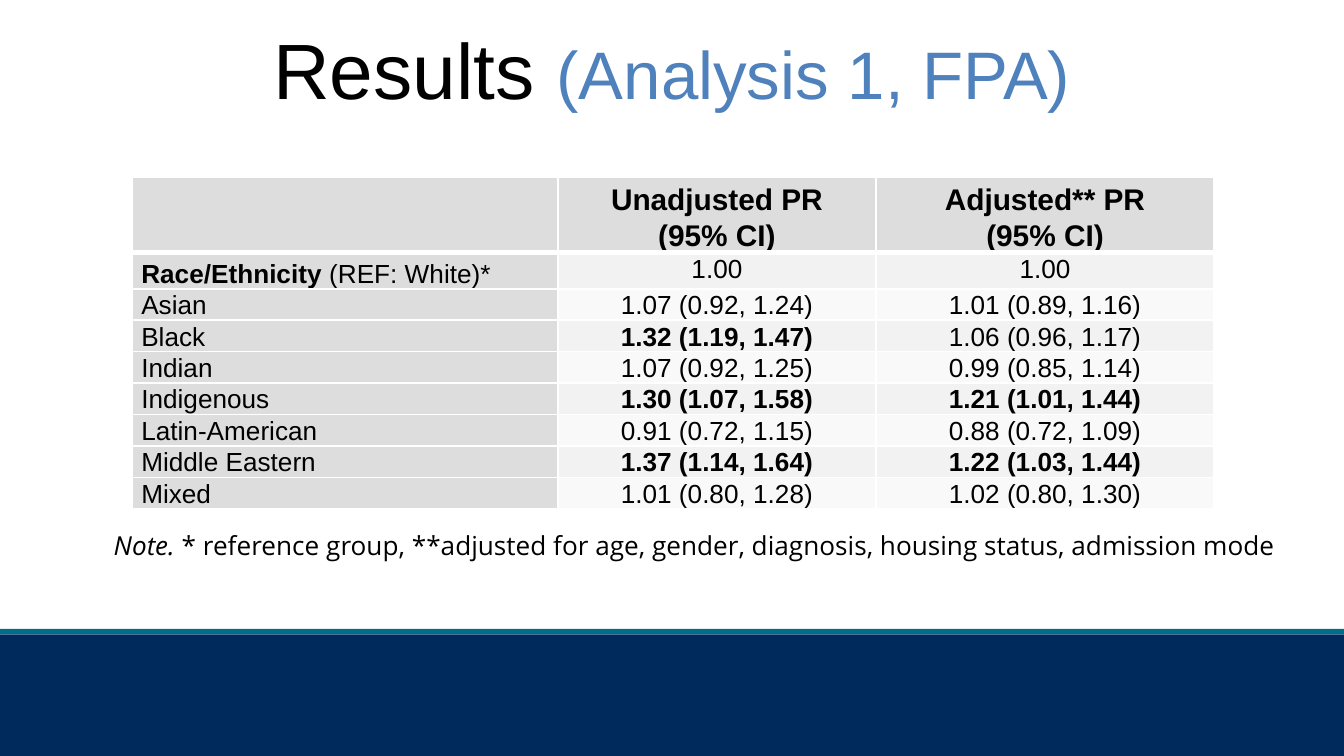
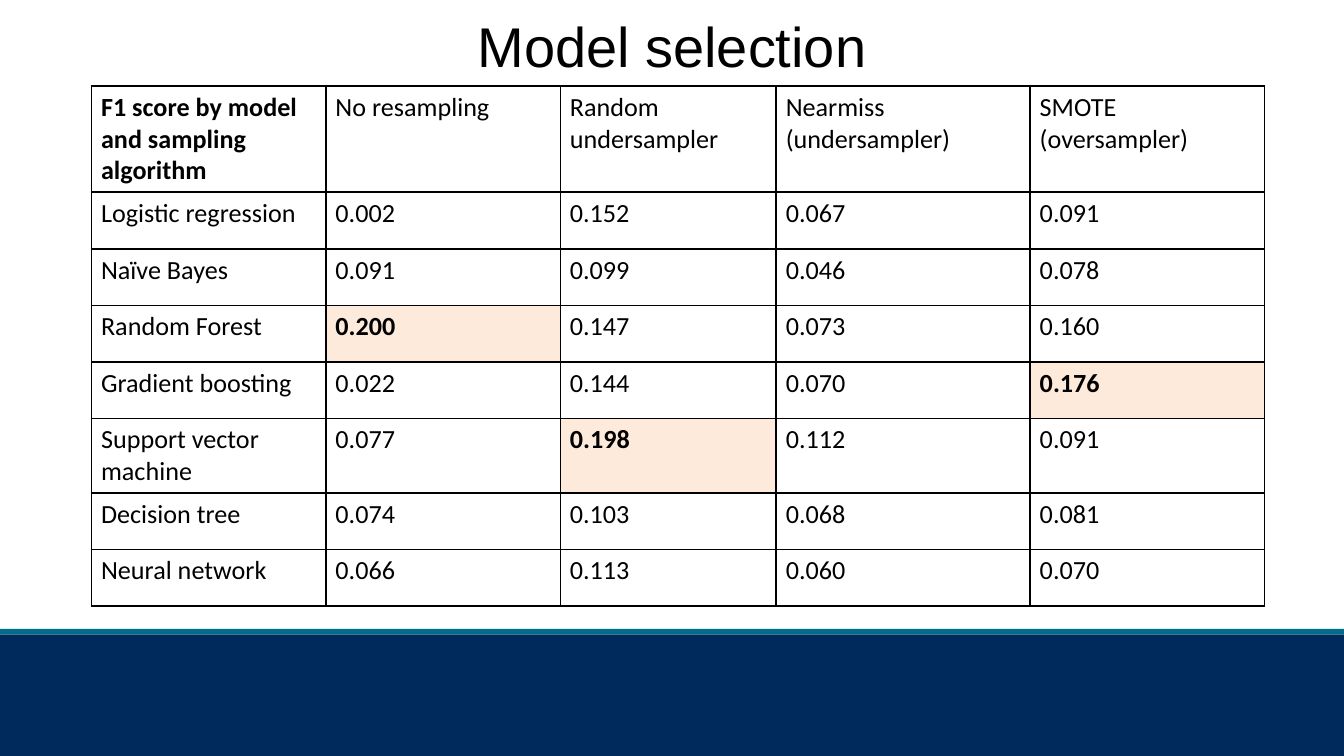
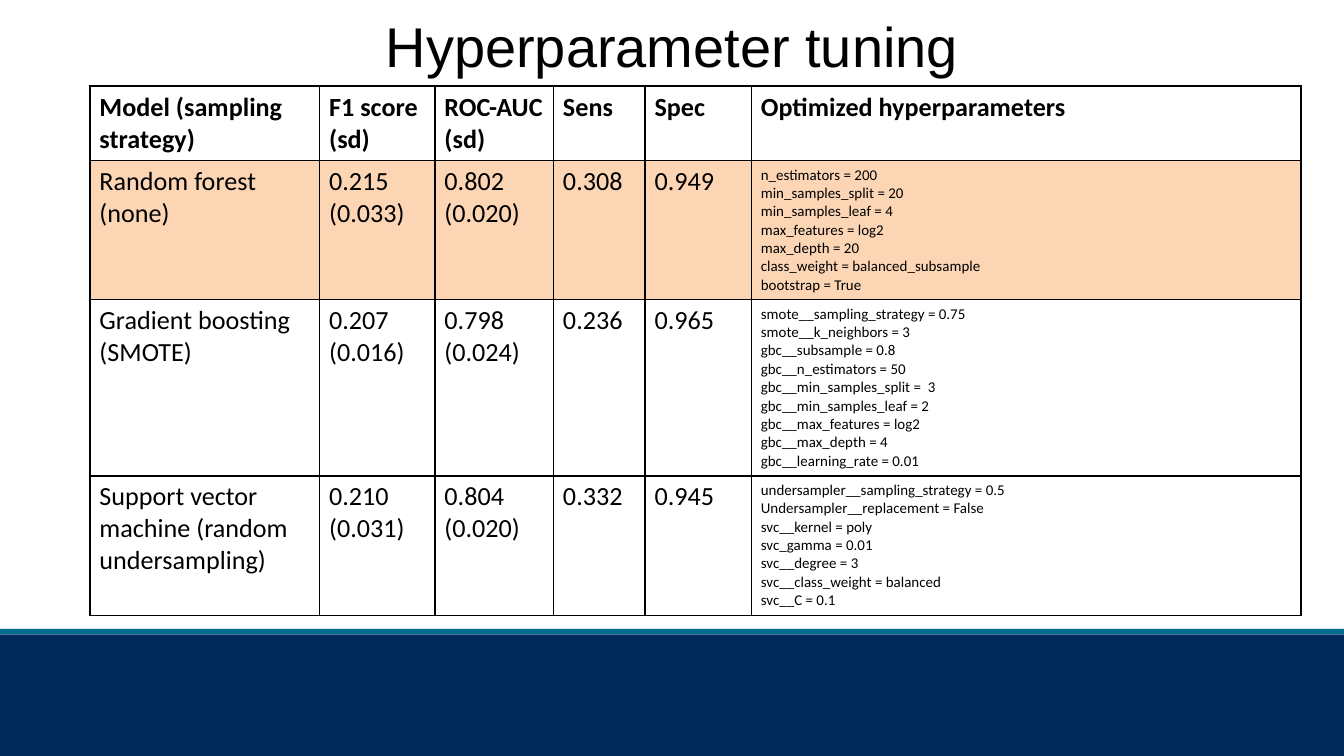
from lxml import etree
from pptx import Presentation
from pptx import util as u
from pptx.dml import color
from pptx.enum import shapes, text
from pptx.oxml import ns

NAVY, TEAL, BLUE = "002A5C", "006D8C", "4F81BD"
BLACK, WHITE = "000000", "FFFFFF"
HEAD_GREY, DARK_ROW, LIGHT_ROW = "DDDDDD", "F2F2F2", "F9F9F9"
PALE_ORANGE, ORANGE = "FDEADA", "FCD5B5"

PR_ROWS = [
    ["", "Unadjusted PR\v(95% CI)", "Adjusted** PR\n(95% CI)"],
    ["Race/Ethnicity (REF: White)*", "1.00", "1.00"],
    ["Asian", "1.07 (0.92, 1.24)", "1.01 (0.89, 1.16)"],
    ["Black", "1.32 (1.19, 1.47)", "1.06 (0.96, 1.17)"],
    ["Indian", "1.07 (0.92, 1.25)", "0.99 (0.85, 1.14)"],
    ["Indigenous", "1.30 (1.07, 1.58)", "1.21 (1.01, 1.44)"],
    ["Latin-American", "0.91 (0.72, 1.15)", "0.88 (0.72, 1.09)"],
    ["Middle Eastern", "1.37 (1.14, 1.64)", "1.22 (1.03, 1.44)"],
    ["Mixed", "1.01 (0.80, 1.28)", "1.02 (0.80, 1.30)"],
]
SIGNIFICANT = {(3, 1), (5, 1), (5, 2), (7, 1), (7, 2)}

F1_ROWS = [
    ["F1 score by model and sampling algorithm", "No resampling",
     "Random undersampler", "Nearmiss (undersampler)", "SMOTE (oversampler)"],
    ["Logistic regression", "0.002", "0.152", "0.067", "0.091"],
    ["Naïve Bayes", "0.091", "0.099", "0.046", "0.078"],
    ["Random Forest", "0.200", "0.147", "0.073", "0.160"],
    ["Gradient boosting", "0.022", "0.144", "0.070", "0.176"],
    ["Support vector machine", "0.077", "0.198", "0.112", "0.091"],
    ["Decision tree", "0.074", "0.103", "0.068", "0.081"],
    ["Neural network", "0.066", "0.113", "0.060", "0.070"],
]
BEST_SCORES = {(3, 1), (4, 4), (5, 2)}

FOREST_PARAMS = """n_estimators = 200
min_samples_split = 20
min_samples_leaf = 4
max_features = log2
max_depth = 20
class_weight = balanced_subsample
bootstrap = True"""
BOOSTING_PARAMS = """smote__sampling_strategy = 0.75
smote__k_neighbors = 3
gbc__subsample = 0.8
gbc__n_estimators = 50
gbc__min_samples_split =  3
gbc__min_samples_leaf = 2
gbc__max_features = log2
gbc__max_depth = 4
gbc__learning_rate = 0.01"""
SVM_PARAMS = """undersampler__sampling_strategy = 0.5
Undersampler__replacement = False
svc__kernel = poly
svc_gamma = 0.01
svc__degree = 3
svc__class_weight = balanced
svc__C = 0.1"""
TUNING_ROWS = [
    ["Model (sampling strategy)", "F1 score (sd)", "ROC-AUC (sd)", "Sens", "Spec",
     "Optimized hyperparameters"],
    ["Random forest (none)", "0.215 (0.033)", "0.802 (0.020)", "0.308", "0.949",
     FOREST_PARAMS],
    ["Gradient boosting (SMOTE)", "0.207 (0.016)", "0.798 (0.024)", "0.236", "0.965",
     BOOSTING_PARAMS],
    ["Support vector machine (random undersampling)", "0.210 (0.031)", "0.804 (0.020)",
     "0.332", "0.945", SVM_PARAMS],
]


def rgb(value):
    return color.RGBColor.from_string(value)


def set_font(font, name, size, fill=BLACK, bold=False, italic=False):
    font.name, font.size = name, u.Pt(size)
    font.bold, font.italic = bold, italic
    font.color.rgb = rgb(fill)


def add_runs(p, parts):
    for words, style in parts:
        r = p.add_run()
        r.text = words
        set_font(r.font, **style)


def add_bands(slide, layout):
    for i, (top, height, fill) in enumerate([(11.99, 2.3, NAVY), (11.89, 0.1, TEAL)]):
        sp = slide.shapes.add_shape(shapes.MSO_SHAPE.RECTANGLE, 0, u.Cm(top),
                                    u.Cm(25.4), u.Cm(height))
        sp.shadow.inherit = False
        sp.fill.solid()
        sp.fill.fore_color.rgb = rgb(fill)
        sp.line.fill.background()
        sp.element.nvSpPr.cNvPr.set("id", str(20 + i))
        layout.shapes.element.insert(2 + i, sp.element)


def set_title(slide, box, parts):
    sp = slide.shapes.title
    sp.left, sp.top, sp.width, sp.height = map(u.Cm, box)
    tf = sp.text_frame
    tf.auto_size = text.MSO_AUTO_SIZE.NONE
    tf.vertical_anchor = text.MSO_ANCHOR.TOP
    tf.margin_top = u.Cm(0.24)
    p = tf.paragraphs[0]
    p.alignment = text.PP_ALIGN.CENTER
    add_runs(p, [(words, {"name": "Arial", "size": size, "fill": fill})
                 for words, size, fill in parts])


def set_borders(cell, fill, top=1, bottom=1):
    tcPr = cell._tc.get_or_add_tcPr()
    for side, width in (("L", 1), ("R", 1), ("T", top), ("B", bottom)):
        ln = etree.SubElement(tcPr, ns.qn(f"a:ln{side}"), w=str(u.Pt(width)))
        solid = etree.SubElement(ln, ns.qn("a:solidFill"))
        etree.SubElement(solid, ns.qn("a:srgbClr"), val=fill)


def add_table(slide, left, top, widths, heights, rows, format_cell):
    frame = slide.shapes.add_table(len(rows), len(widths), u.Cm(left), u.Cm(top),
                                   u.Cm(sum(widths)), u.Cm(sum(heights)))
    table = frame.table
    table.first_row = table.horz_banding = False
    for column, width in zip(table.columns, widths):
        column.width = u.Cm(width)
    for row, height in zip(table.rows, heights):
        row.height = u.Cm(height)
    for i, values in enumerate(rows):
        for j, value in enumerate(values):
            cell = table.cell(i, j)
            cell.text_frame.text = value
            cell.margin_left = cell.margin_right = u.Cm(0.18)
            format_cell(cell, i, j)


def fill_cell(cell, fill=None):
    if fill:
        cell.fill.solid()
        cell.fill.fore_color.rgb = rgb(fill)
    else:
        cell.fill.background()


def format_pr_cell(cell, i, j):
    cell.margin_top = cell.margin_bottom = 0
    set_borders(cell, WHITE, top=3 if i == 1 else 1, bottom=3 if i == 0 else 1)
    fill_cell(cell, HEAD_GREY if i == 0 or j == 0 else DARK_ROW if i % 2 else LIGHT_ROW)
    if i != 1 or j == 0:
        cell.vertical_anchor = text.MSO_ANCHOR.BOTTOM
    for p in cell.text_frame.paragraphs:
        p.line_spacing = 1.07
        if j:
            p.alignment = text.PP_ALIGN.CENTER
        if (i, j) == (1, 0):
            label, reference = p.text.split(" ", 1)
            p.text = ""
            add_runs(p, [(label + " ", {"name": "Arial", "size": 14, "bold": True}),
                         (reference, {"name": "Arial", "size": 14})])
        for r in p.runs if (i, j) != (1, 0) else []:
            set_font(r.font, "Arial", 14 if i else 16,
                     bold=i == 0 or (i, j) in SIGNIFICANT)


def format_grid_cell(cell, fill, bold, size=14):
    cell.margin_top = cell.margin_bottom = u.Cm(0.1)
    set_borders(cell, BLACK)
    fill_cell(cell, fill)
    for p in cell.text_frame.paragraphs:
        for r in p.runs:
            set_font(r.font, "Calibri", size, bold=bold)


def format_f1_cell(cell, i, j):
    best = (i, j) in BEST_SCORES
    format_grid_cell(cell, PALE_ORANGE if best else None, best or i == j == 0)


def format_tuning_cell(cell, i, j):
    format_grid_cell(cell, ORANGE if i == 1 else None, i == 0, 8 if i and j == 5 else 14)


def add_note(slide, box):
    tf = slide.shapes.add_textbox(*map(u.Cm, box)).text_frame
    tf.word_wrap = True
    add_runs(tf.paragraphs[0], [
        ("Note.", {"name": "Open Sans", "size": 14, "italic": True}),
        (" * reference group, **adjusted for age, gender, diagnosis, housing status, "
         "admission mode", {"name": "Open Sans", "size": 14}),
    ])


def build_results(slide):
    set_title(slide, (-0.3, 0.15, 26, 2.39),
              [("Results ", 42, BLACK), ("(Analysis 1, FPA)", 36, BLUE)])
    add_table(slide, 2.49, 3.35, [8.05, 6.02, 6.38], [1.42, 0.69] + [0.53] * 7,
              PR_ROWS, format_pr_cell)
    add_note(slide, (1.9, 9.88, 26.34, 0.86))


def build_grid(slide, title, left, widths, heights, rows, format_cell):
    set_title(slide, (1.27, -0.03, 22.86, 2.39), [(title, 30, BLACK)])
    add_table(slide, left, 1.63, widths, heights, rows, format_cell)


def main():
    prs = Presentation()
    prs.slide_width, prs.slide_height = u.Cm(25.4), u.Cm(14.29)
    layout = prs.slide_layouts[5]
    results, selection, tuning = [prs.slides.add_slide(layout) for _ in range(3)]
    add_bands(results, layout)
    build_results(results)
    build_grid(selection, "Model selection", 1.73, [4.43, 4.43, 4.08, 4.8, 4.43],
               [1.91] + [1.07] * 4 + [1.35] + [1.07] * 2, F1_ROWS, format_f1_cell)
    build_grid(tuning, "Hyperparameter tuning", 1.7,
               [4.34, 2.18, 2.24, 1.73, 2.01, 10.39], [1.32, 2.39, 3.33, 2.64],
               TUNING_ROWS, format_tuning_cell)
    prs.save("out.pptx")


if __name__ == "__main__":
    main()
